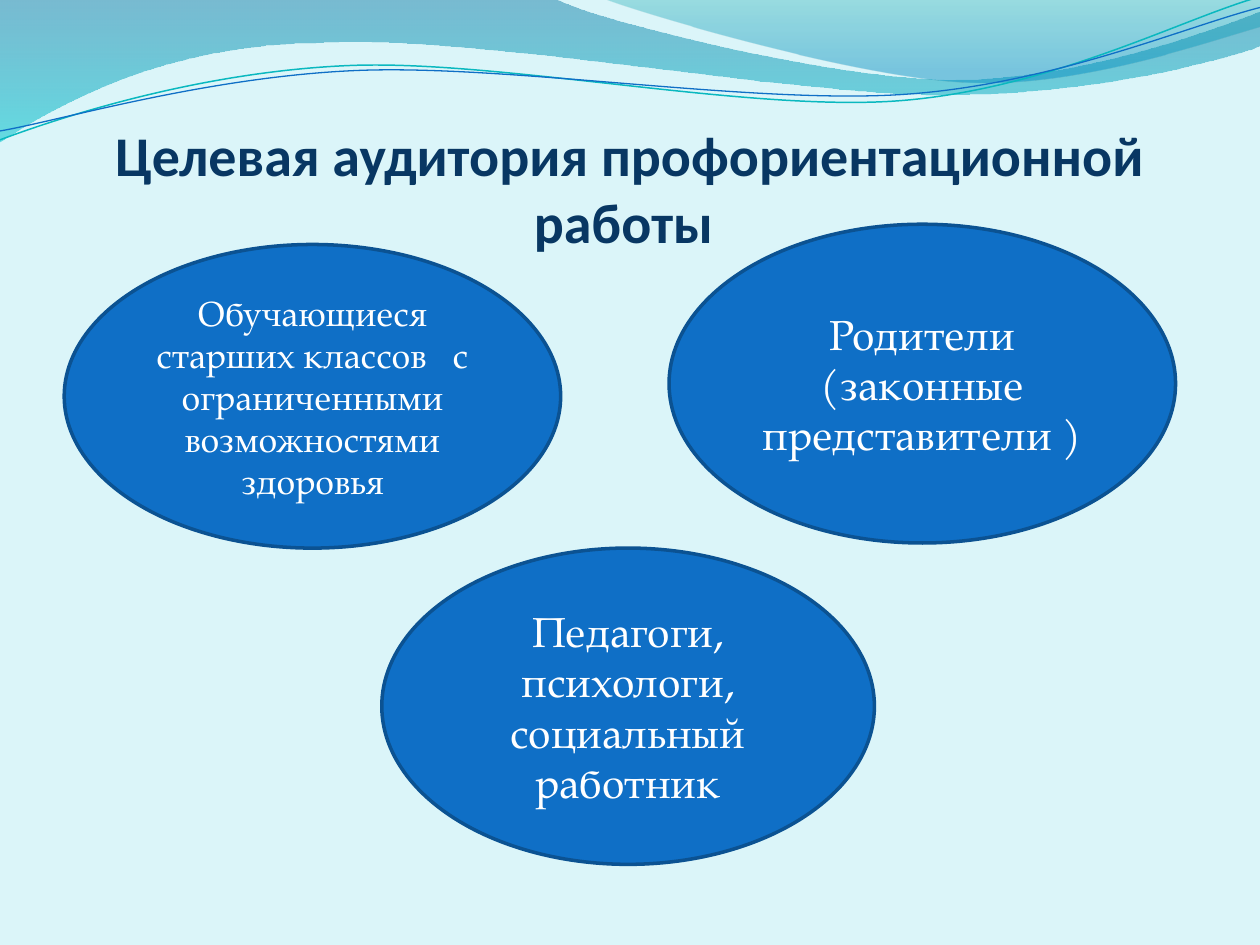
from math import cos, radians, sin

from lxml import etree
from pptx import Presentation
from pptx.dml.color import RGBColor
from pptx.enum.shapes import MSO_SHAPE
from pptx.enum.text import MSO_ANCHOR, PP_ALIGN
from pptx.oxml.ns import qn
from pptx.util import Inches, Pt

COLORS = {
    "background": "DBF5F9", "title": "083763", "white": "FFFFFF",
    "ellipse": "0F6FC6", "outline": "0B5292", "teal_line": "0AB8BF",
    "deep_blue": "0074A1", "cyan": "00C6CF", "teal": "00A1A9", "sky": "008BBF",
}


def add_wave(slide, segments, closed):
    """Draw straight segments (2 numbers) and cubic curves (6 numbers), in inches."""
    points = [(Inches(x), Inches(y)) for segment in segments
              for x, y in zip(segment[::2], segment[1::2])]
    builder = slide.shapes.build_freeform(*points[0])
    builder.add_line_segments(points[1:], close=closed)
    shape = builder.convert_to_shape()
    shape.shadow.inherit = False
    vertices = iter(list(shape._element.iter(qn("a:lnTo"))))
    for segment in segments[1:]:
        vertex = next(vertices)
        if len(segment) == 6:
            vertex.tag = qn("a:cubicBezTo")
            for _ in range(2):
                following = next(vertices)
                vertex.append(following[0])
                following.getparent().remove(following)
    return shape


def write_text(shape, text, frame_format, font_format, color):
    frame = shape.text_frame
    for name, value in frame_format.items():
        setattr(frame, name, value)
    paragraph = frame.paragraphs[0]
    paragraph.alignment = PP_ALIGN.CENTER
    run = paragraph.add_run()
    run.text = text
    for name, value in font_format.items():
        setattr(run.font, name, value)
    run.font.color.rgb = RGBColor.from_string(COLORS[color])


presentation = Presentation()
presentation.slide_width = Inches(10)
presentation.slide_height = Inches(7.5)
slide = presentation.slides.add_slide(presentation.slide_layouts[6])
slide.background.fill.solid()
slide.background.fill.fore_color.rgb = RGBColor.from_string(COLORS["background"])

# Filled waves: outline, then gradient stops (position, colour, opacity in percent)
bands = [
    ([(0, -0.01), (4.4, -0.01), (4.76, 0.17, 6.64, 0.63, 7.58, 0.63),
      (8.53, 0.63, 9.58, 0.26, 10, 0.09), (10.01, 0.36),
      (9.83, 0.44, 8.7, 0.76, 7.46, 0.75), (6.22, 0.75, 3.82, 0.28, 2.57, 0.34),
      (1.29, 0.35, 0.46, 0.83, -0.01, 1.13), (0, -0.01)],
     [(0, "deep_blue", 45), (1, "cyan", 55)]),
    ([(4.79, -0.01), (5.09, 0.11, 6.82, 0.62, 7.69, 0.65),
      (8.56, 0.69, 9.61, 0.32, 10, 0.21), (10, 0), (4.79, -0.01)],
     [(0, "teal", 30), (0.8, "sky", 45)]),
]
for segments, stops in bands:
    band = add_wave(slide, segments, True)
    band.line.fill.background()
    band.fill.gradient()
    band.fill.gradient_angle = 270
    for gradient_stop, (position, color, opacity) in zip(band.fill.gradient_stops, stops):
        gradient_stop.position = position
        gradient_stop.color.rgb = RGBColor.from_string(COLORS[color])
    color_elements = band._element.spPr.iter(qn("a:srgbClr"))
    for element, (position, color, opacity) in zip(color_elements, stops):
        etree.SubElement(element, qn("a:alpha")).set("val", str(opacity * 1000))

# Thin wave lines: points as seen on the slide, turned level before the shape is rotated
TILT = 2.7
cosine, sine = cos(radians(TILT)), sin(radians(TILT))
lines = [
    ([(0, 1.11), (0.48, 0.93, 1.58, 0.57, 2.77, 0.52),
      (3.95, 0.47, 5.93, 0.89, 7.13, 0.8), (8.33, 0.71, 9.38, 0.15, 9.98, -0.02)],
     (4.99, 0.58), "teal_line", 0.85),
    ([(0, 1.04), (0.47, 0.96, 1.64, 0.61, 2.83, 0.56),
      (4.03, 0.51, 5.97, 0.83, 7.17, 0.75), (8.36, 0.67, 9.41, 0.21, 10, 0.06)],
     (5, 0.59), "ellipse", 0.75),
]
for segments, (center_x, center_y), color, width in lines:
    level_segments = []
    for segment in segments:
        level = []
        for x, y in zip(segment[::2], segment[1::2]):
            dx, dy = x - center_x, y - center_y
            level += [center_x + dx * cosine - dy * sine, center_y + dx * sine + dy * cosine]
        level_segments.append(level)
    wave_line = add_wave(slide, level_segments, False)
    wave_line.rotation = 360 - TILT
    wave_line.fill.background()
    wave_line.line.color.rgb = RGBColor.from_string(COLORS[color])
    wave_line.line.width = Pt(width)

title = slide.shapes.add_textbox(Inches(0.5), Inches(0.77), Inches(9), Inches(1.25))
write_text(
    title, "Целевая аудитория профориентационной работы ",
    {"word_wrap": True, "vertical_anchor": MSO_ANCHOR.BOTTOM, "margin_left": 0,
     "margin_top": Inches(0.05), "margin_right": 0, "margin_bottom": 0},
    {"name": "Calibri", "size": Pt(32), "bold": True}, "title")

audiences = [
    ("Обучающиеся старших классов   с ограниченными возможностями здоровья",
     20, (0.51, 1.94, 3.94, 2.41)),
    ("Родители (законные представители )", 24, (5.31, 1.78, 4.02, 2.53)),
    ("Педагоги, психологи, социальный работник", 24, (3.03, 4.35, 3.91, 2.51)),
]
for text, size, box in audiences:
    ellipse = slide.shapes.add_shape(MSO_SHAPE.OVAL, *[Inches(value) for value in box])
    ellipse.shadow.inherit = False
    ellipse.fill.solid()
    ellipse.fill.fore_color.rgb = RGBColor.from_string(COLORS["ellipse"])
    ellipse.line.color.rgb = RGBColor.from_string(COLORS["outline"])
    ellipse.line.width = Pt(2)
    write_text(ellipse, text, {"word_wrap": True, "vertical_anchor": MSO_ANCHOR.MIDDLE},
               {"name": "TeX Gyre Pagella", "size": Pt(size)}, "white")

presentation.save("out.pptx")
